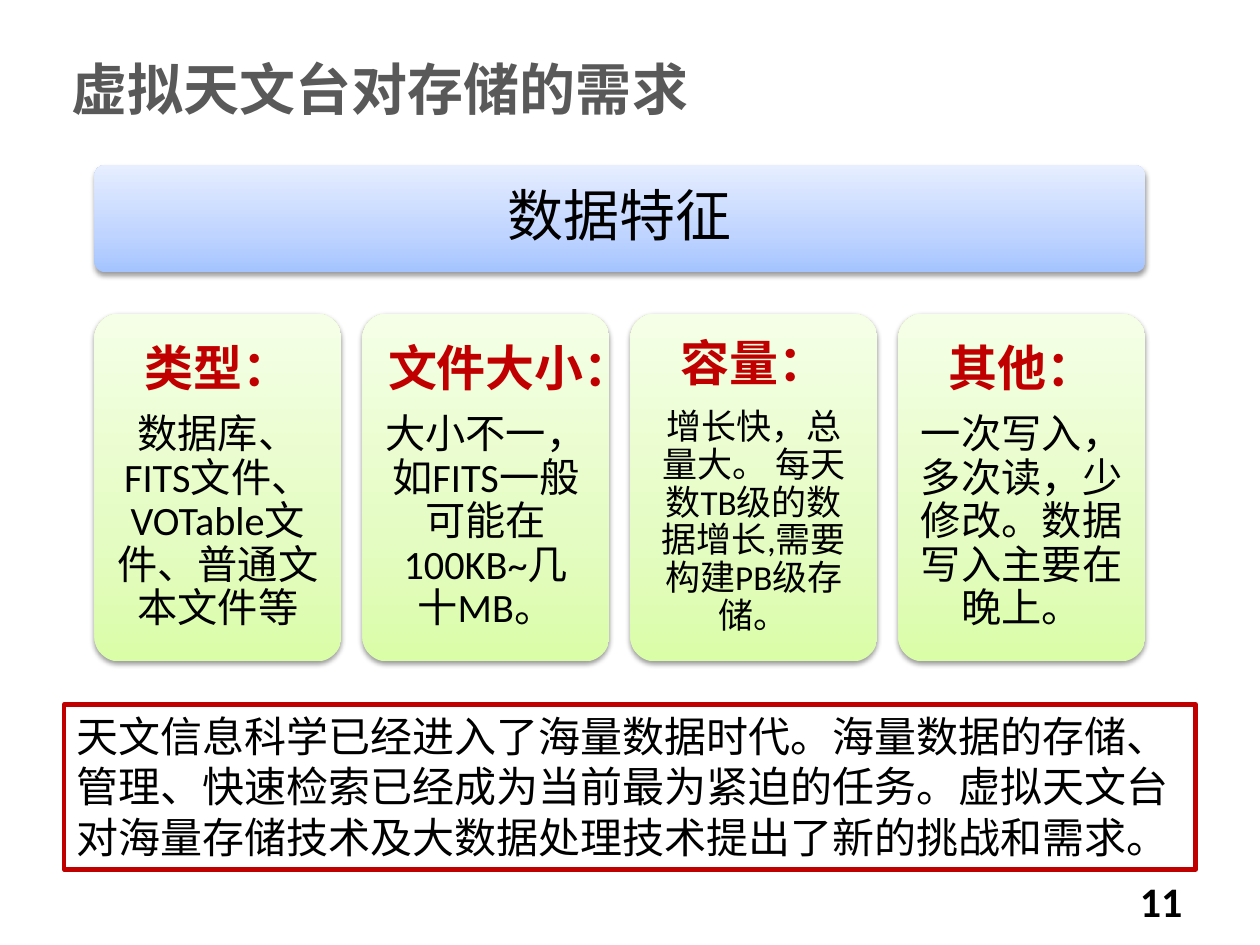
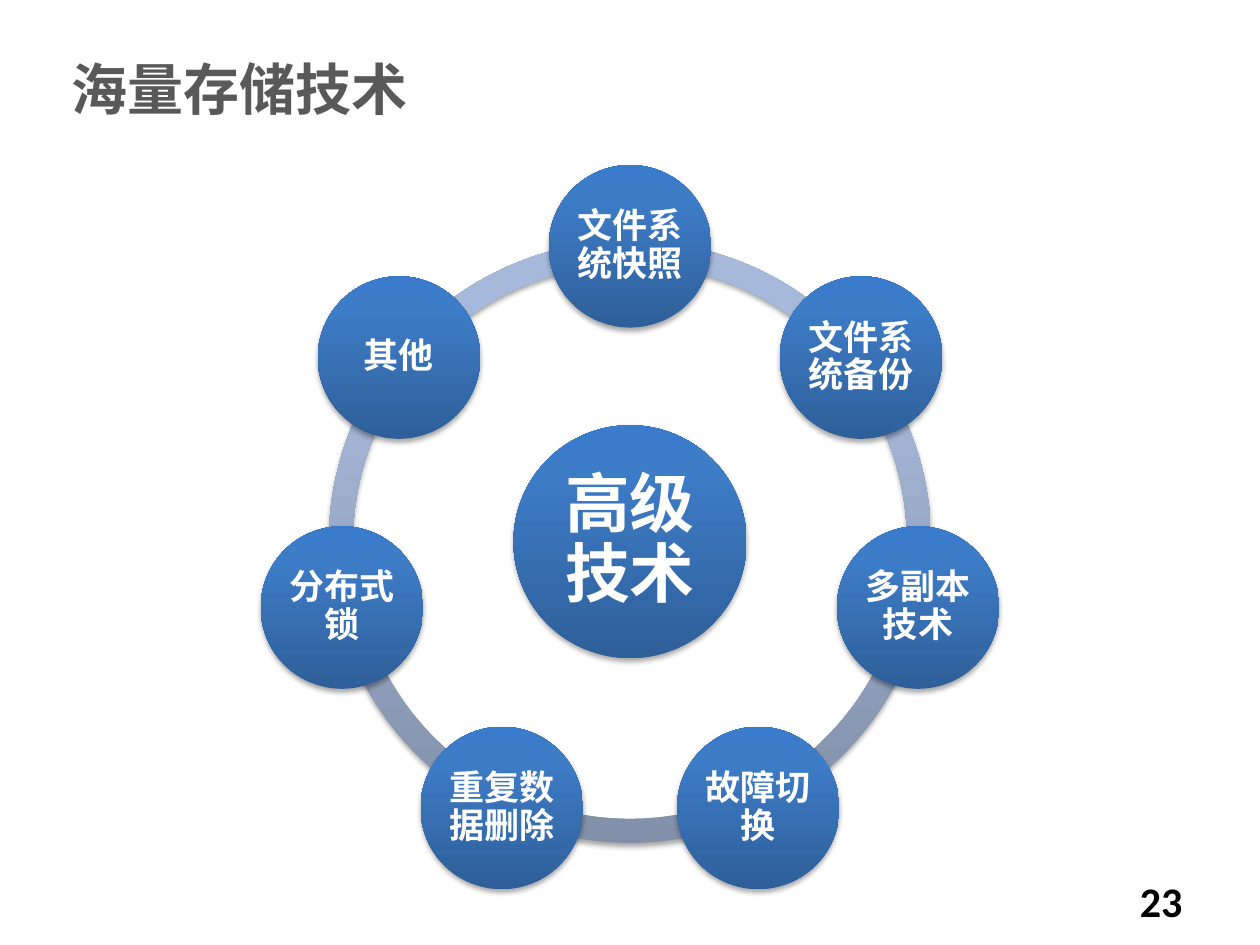
"""Two slides on the storage needs of a virtual observatory."""
from collections import namedtuple
from math import cos, radians, sin

from lxml import etree
from pptx import Presentation
from pptx.dml.color import RGBColor
from pptx.enum.shapes import MSO_SHAPE
from pptx.enum.text import MSO_ANCHOR, PP_ALIGN
from pptx.oxml.ns import qn
from pptx.util import Inches, Pt

ROUNDED, RECTANGLE = MSO_SHAPE.ROUNDED_RECTANGLE, MSO_SHAPE.RECTANGLE
OVAL, ARC = MSO_SHAPE.OVAL, MSO_SHAPE.BLOCK_ARC
LEFT, CENTER = PP_ALIGN.LEFT, PP_ALIGN.CENTER
TOP, MIDDLE = MSO_ANCHOR.TOP, MSO_ANCHOR.MIDDLE

SLIDE_WIDTH, SLIDE_HEIGHT = Inches(10), Inches(7.5)
COLUMN, ROW = SLIDE_WIDTH / 100, SLIDE_HEIGHT / 75
LATIN_FONT, HAN_FONT = "Calibri", "Noto Sans CJK SC"
TITLE_LAYOUT = 5

COLORS = {"title": "595959", "text": "000000", "accent": "C00000",
          "on_dark": "FFFFFF", "shadow": "000000"}
GRADIENTS = {
    "banner": {0: "A4C4FF", 35: "BFD4FF", 100: "E6EEFF"},
    "card": {0: "DAFDA7", 35: "E4FCC2", 100: "F5FFE7"},
    "ring": {0: "818FA8", 80: "A7B9DA", 100: "A7BADC"},
    "node": {0: "2F5F99", 80: "3D7CC7", 100: "3A7CCB"},
}

Box = namedtuple("Box", "left top width height")
Line = namedtuple("Line", "text size color bold", defaults=("text", False))

TITLE_BOX = Box(4.7, 3.9, 55.5, 6.2)
NUMBER_BOX = Box(87.8, 69, 8.7, 5)
FEATURES_BOX = Box(7.5, 13.1, 83.4, 39.4)
STATEMENT_BOX = Box(5.1, 55.9, 89.8, 13.1)
WHEEL_BOX = Box(20.7, 13.1, 58.6, 59.8)

FEATURES = [
    ("类型：", "数据库、FITS文件、VOTable文件、普通文本文件等", 23),
    ("文件大小：", "大小不一，如FITS一般可能在100KB~几十MB。", 23),
    ("容量：", "增长快，总量大。 每天数TB级的数据增长,需要构建PB级存储。", 20),
    ("其他：", "一次写入，多次读，少修改。数据写入主要在晚上。", 23),
]
STATEMENT = ("天文信息科学已经进入了海量数据时代。海量数据的存储、管理、快速检索"
             "已经成为当前最为紧迫的任务。虚拟天文台对海量存储技术及大数据处理技术"
             "提出了新的挑战和需求。")
TECHNIQUES = ["文件系统快照", "文件系统备份", "多副本技术", "故障切换",
              "重复数据删除", "分布式锁", "其他"]


def to_emu(box):
    """Turn a box in columns and rows into slide lengths."""
    return [int(length * unit) for length, unit in zip(box, (COLUMN, ROW) * 2)]


def centered_box(x, y, size):
    """Return a square box around a centre."""
    return Box(x - size / 2, y - size / 2, size, size)


def write(frame, lines, align=CENTER, anchor=MIDDLE, font=LATIN_FONT,
          margins=(0.1, 0.05), diagram=False):
    """Fill a text frame with one paragraph per line."""
    frame.word_wrap, frame.vertical_anchor = True, anchor
    frame.margin_left = frame.margin_right = Inches(margins[0])
    frame.margin_top = frame.margin_bottom = Inches(margins[1])
    for index, line in enumerate(lines):
        paragraph = frame.add_paragraph() if index else frame.paragraphs[0]
        paragraph.alignment = align
        if diagram:
            space_diagram(paragraph)
        run = paragraph.add_run()
        run.text = line.text
        run.font.name, run.font.size, run.font.bold = font, Pt(line.size), line.bold
        run.font.color.rgb = RGBColor.from_string(COLORS[line.color])
        etree.SubElement(run.font._element, qn("a:ea"), typeface=HAN_FONT)


def space_diagram(paragraph):
    """Give a diagram paragraph tight lines and 35 percent space after."""
    paragraph.line_spacing = 0.9
    paragraph.space_after = Pt(0)
    after = paragraph._p.pPr.find(qn("a:spcAft"))
    after.remove(after[0])
    etree.SubElement(after, qn("a:spcPct"), val="35000")


def add_color(parent, color, alpha=None):
    """Append a colour, with an opacity in percent if given."""
    node = etree.SubElement(parent, qn("a:srgbClr"), val=color)
    if alpha is not None:
        etree.SubElement(node, qn("a:alpha"), val=str(alpha * 1000))


def add_glossy(slide, kind, box, gradient, adjustments=(), opacity=35, distance=1.8):
    """Add a borderless shape with a vertical gradient and a soft shadow."""
    shape = slide.shapes.add_shape(kind, *to_emu(box))
    for index, value in enumerate(adjustments):
        shape.adjustments[index] = value
    shape.line.fill.background()
    shape.fill.gradient()
    shape.fill.gradient_angle = 90
    properties = shape._element.spPr
    stops = properties.find(qn("a:gradFill")).find(qn("a:gsLst"))
    for stop in list(stops):
        stops.remove(stop)
    for position, color in GRADIENTS[gradient].items():
        add_color(etree.SubElement(stops, qn("a:gs"), pos=str(position * 1000)), color)
    shape.shadow.inherit = False
    shadow = etree.SubElement(
        properties.find(qn("a:effectLst")), qn("a:outerShdw"), blurRad=str(Pt(3.1)),
        dist=str(Pt(distance)), dir="5400000", rotWithShape="0")
    add_color(shadow, COLORS["shadow"], opacity)
    return shape


def add_panel(slide, box, gradient, lines, margin):
    """Add a rounded panel with its text."""
    panel = add_glossy(slide, ROUNDED, box, gradient, [0.1], 38, 1.6)
    write(panel.text_frame, lines, margins=(margin, margin), diagram=True)


def add_node(slide, box, text, size, margin):
    """Add a round node of the wheel."""
    node = add_glossy(slide, OVAL, box, "node")
    write(node.text_frame, [Line(text, size, "on_dark", True)],
          margins=(margin, margin), diagram=True)


def add_features(slide, box):
    """Place the banner above a row of equal cards."""
    banner_height, card_width, card_height = 8.5, 19.6, 27.6
    add_panel(slide, box._replace(height=banner_height), "banner",
              [Line("数据特征", 32)], 0.13)
    pitch = (box.width - card_width) / (len(FEATURES) - 1)
    card_top = box.top + box.height - card_height
    for index, (heading, detail, size) in enumerate(FEATURES):
        card = Box(box.left + index * pitch, card_top, card_width, card_height)
        add_panel(slide, card, "card",
                  [Line(heading, 28, "accent", True), Line(detail, size)], 0.12)


def add_statement(slide, box):
    """Add the outlined closing statement."""
    statement = slide.shapes.add_shape(RECTANGLE, *to_emu(box))
    statement.shadow.inherit = False
    statement.fill.background()
    statement.line.color.rgb = RGBColor.from_string(COLORS["accent"])
    statement.line.width = Pt(2.5)
    write(statement.text_frame, [Line(STATEMENT, 24)], LEFT, TOP)


def add_wheel(slide, box):
    """Place the techniques on a ring around the hub."""
    node_size, hub_size, ring_size = 12.9, 18.5, 47.8
    orbit = 23.45
    center_x = box.left + box.width / 2
    center_y = box.top + node_size / 2 + orbit
    step = 360 / len(TECHNIQUES)
    angles = [270 + index * step for index in range(len(TECHNIQUES))]
    ring = centered_box(center_x, center_y, ring_size)
    for angle in reversed(angles):
        ends = [end % 360 * 0.6 for end in (angle, angle + step)]
        add_glossy(slide, ARC, ring, "ring", ends + [0.04])
    add_node(slide, centered_box(center_x, center_y, hub_size), "高级技术", 37, 0.05)
    for angle, technique in zip(angles, TECHNIQUES):
        x = center_x + orbit * cos(radians(angle))
        y = center_y + orbit * sin(radians(angle))
        add_node(slide, centered_box(x, y, node_size), technique, 20, 0.03)


def add_titled_slide(deck, title, number):
    """Add a slide with the shared title style and page number."""
    slide = deck.slides.add_slide(deck.slide_layouts[TITLE_LAYOUT])
    heading = slide.shapes.title
    heading.left, heading.top, heading.width, heading.height = to_emu(TITLE_BOX)
    write(heading.text_frame, [Line(title, 32, "title", True)], LEFT, font=HAN_FONT)
    page = slide.shapes.add_textbox(*to_emu(NUMBER_BOX))
    write(page.text_frame, [Line(number, 24, bold=True)], anchor=TOP)
    return slide


def main():
    """Build and save the deck."""
    deck = Presentation()
    deck.slide_width, deck.slide_height = SLIDE_WIDTH, SLIDE_HEIGHT
    needs = add_titled_slide(deck, "虚拟天文台对存储的需求", "11")
    add_features(needs, FEATURES_BOX)
    add_statement(needs, STATEMENT_BOX)
    techniques = add_titled_slide(deck, "海量存储技术", "23")
    add_wheel(techniques, WHEEL_BOX)
    deck.save("out.pptx")


if __name__ == "__main__":
    main()
